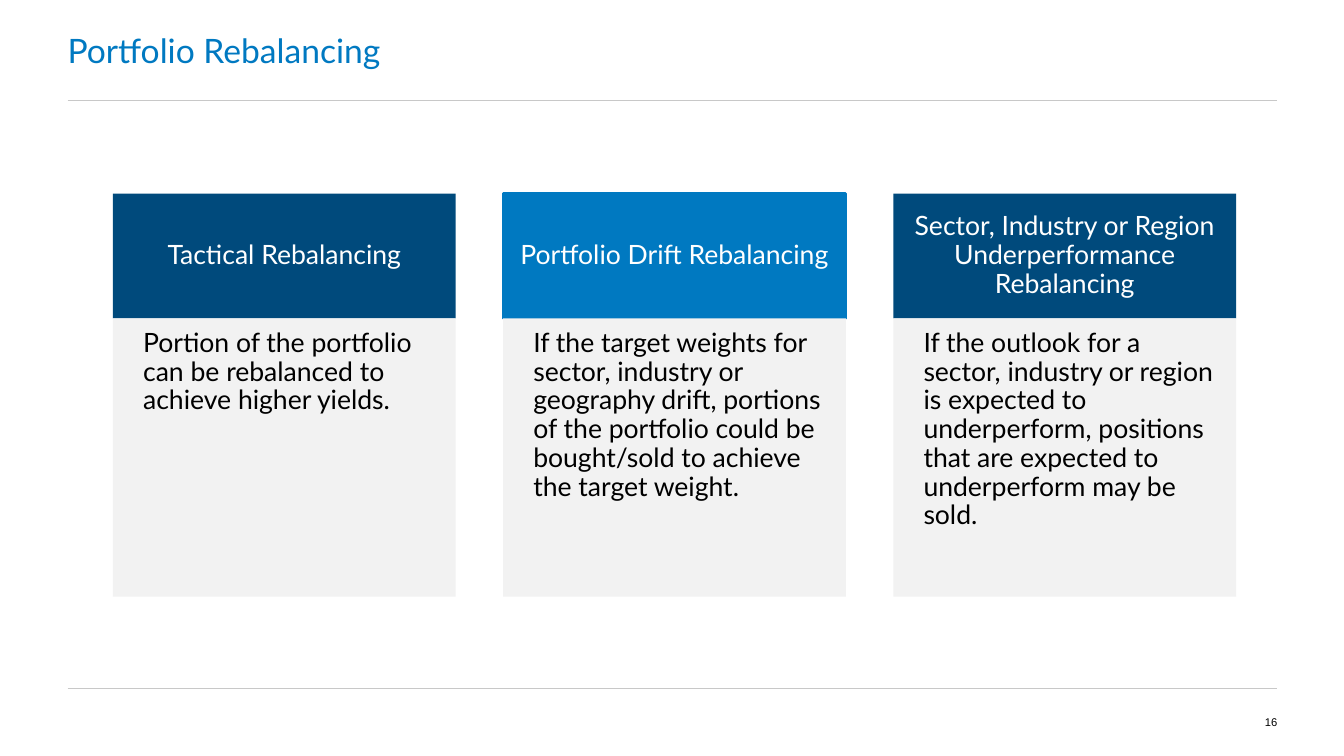
"""Build the portfolio rebalancing slide with three described cards."""
from dataclasses import dataclass

from lxml import etree
from pptx import Presentation
from pptx import util as u
from pptx.dml.color import RGBColor
from pptx.enum import shapes, text
from pptx.oxml import ns

NAVY, BLUE, PALE, RULE = "004A7C", "0079C1", "F2F2F2", "C8C8C8"
WHITE, BLACK = "FFFFFF", "000000"
MARGIN, CONTENT_WIDTH = 0.67, 12
CARD_LEFT, CARD_STEP, CARD_WIDTH = 1.12, 3.87, 3.4
HEADER_TOP, HEADER_HEIGHT, BODY_HEIGHT = 1.92, 1.24, 2.76
RULE_POSITIONS = (1, 6.83)


@dataclass(frozen=True)
class Card:
    heading: str
    body: str
    fill: str = NAVY
    outline: str | None = None


@dataclass(frozen=True)
class TextStyle:
    size: float
    color: str
    font: str = "Lato"
    align: text.PP_ALIGN = text.PP_ALIGN.LEFT
    anchor: text.MSO_ANCHOR = text.MSO_ANCHOR.MIDDLE
    insets: tuple[float, float, float, float] = (0, 0, 0, 0)
    line_spacing: float = 1.0


TITLE_STYLE = TextStyle(24, BLUE)
NUMBER_STYLE = TextStyle(8, BLACK, "Arial", text.PP_ALIGN.RIGHT)
HEADING_STYLE = TextStyle(19, WHITE, align=text.PP_ALIGN.CENTER,
                          insets=(0.15, 0.08, 0.15, 0.08), line_spacing=0.9)
BODY_STYLE = TextStyle(19, BLACK, anchor=text.MSO_ANCHOR.TOP,
                       insets=(0.3, 0.11, 0.15, 0.17), line_spacing=0.9)

CARDS = (
    Card("Tactical Rebalancing",
         "Portion of the portfolio can be rebalanced to achieve higher yields."),
    Card("Portfolio Drift Rebalancing",
         "If the target weights for sector, industry or geography drift, portions of "
         "the portfolio could be bought/sold to achieve the target weight.",
         BLUE, BLUE),
    Card("Sector, Industry or Region Underperformance Rebalancing",
         "If the outlook for a sector, industry or region is expected to underperform, "
         "positions that are expected to underperform may be sold."),
)


def rgb(color: str) -> RGBColor:
    return RGBColor.from_string(color)


def set_attributes(target, values: dict) -> None:
    for name, value in values.items():
        setattr(target, name, value)


def write_text(shape, content: str, style: TextStyle) -> None:
    frame = shape.text_frame
    frame.text = content
    left, top, right, bottom = (u.Inches(inset) for inset in style.insets)
    set_attributes(frame, {
        "auto_size": text.MSO_AUTO_SIZE.NONE, "word_wrap": True,
        "vertical_anchor": style.anchor, "margin_left": left, "margin_top": top,
        "margin_right": right, "margin_bottom": bottom,
    })
    paragraph = frame.paragraphs[0]
    set_attributes(paragraph, {
        "alignment": style.align, "line_spacing": style.line_spacing,
        "space_before": u.Pt(0),
    })
    font = paragraph.runs[0].font
    set_attributes(font, {"name": style.font, "size": u.Pt(style.size)})
    font.color.rgb = rgb(style.color)


def add_rule(slide, top: float) -> None:
    connector = slide.shapes.add_connector(
        shapes.MSO_CONNECTOR.STRAIGHT, u.Inches(MARGIN), u.Inches(top),
        u.Inches(MARGIN + CONTENT_WIDTH), u.Inches(top))
    connector.line.color.rgb = rgb(RULE)
    connector.line.width = u.Pt(0.75)
    etree.SubElement(connector._element.spPr, ns.qn("a:effectLst"))


def add_panel(slide, left: float, top: float, height: float, fill: str,
              content: str, style: TextStyle, outline: str | None = None) -> None:
    shape = slide.shapes.add_shape(
        shapes.MSO_SHAPE.RECTANGLE, u.Inches(left), u.Inches(top),
        u.Inches(CARD_WIDTH), u.Inches(height))
    shape.shadow.inherit = False
    shape.fill.solid()
    shape.fill.fore_color.rgb = rgb(fill)
    if outline:
        shape.line.color.rgb = rgb(outline)
        shape.line.width = u.Pt(2)
    else:
        shape.line.fill.background()
    write_text(shape, content, style)


def add_card(slide, index: int, card: Card) -> None:
    left = CARD_LEFT + index * CARD_STEP
    add_panel(slide, left, HEADER_TOP, HEADER_HEIGHT, card.fill,
              card.heading, HEADING_STYLE, card.outline)
    add_panel(slide, left, HEADER_TOP + HEADER_HEIGHT, BODY_HEIGHT, PALE,
              card.body, BODY_STYLE)


def main() -> None:
    presentation = Presentation()
    set_attributes(presentation, {"slide_width": u.Inches(13.33),
                                  "slide_height": u.Inches(7.5)})
    slide = presentation.slides.add_slide(presentation.slide_layouts[5])
    for top in RULE_POSITIONS:
        add_rule(slide, top)

    title = slide.shapes.title
    set_attributes(title, {"left": u.Inches(MARGIN), "top": u.Inches(0),
                           "width": u.Inches(CONTENT_WIDTH), "height": u.Inches(1)})
    write_text(title, "Portfolio Rebalancing", TITLE_STYLE)

    page_number = slide.shapes.add_textbox(
        u.Inches(12), u.Inches(6.83), u.Inches(0.67), u.Inches(0.67))
    write_text(page_number, "16", NUMBER_STYLE)

    for index, card in enumerate(CARDS):
        add_card(slide, index, card)
    presentation.save("out.pptx")


if __name__ == "__main__":
    main()
